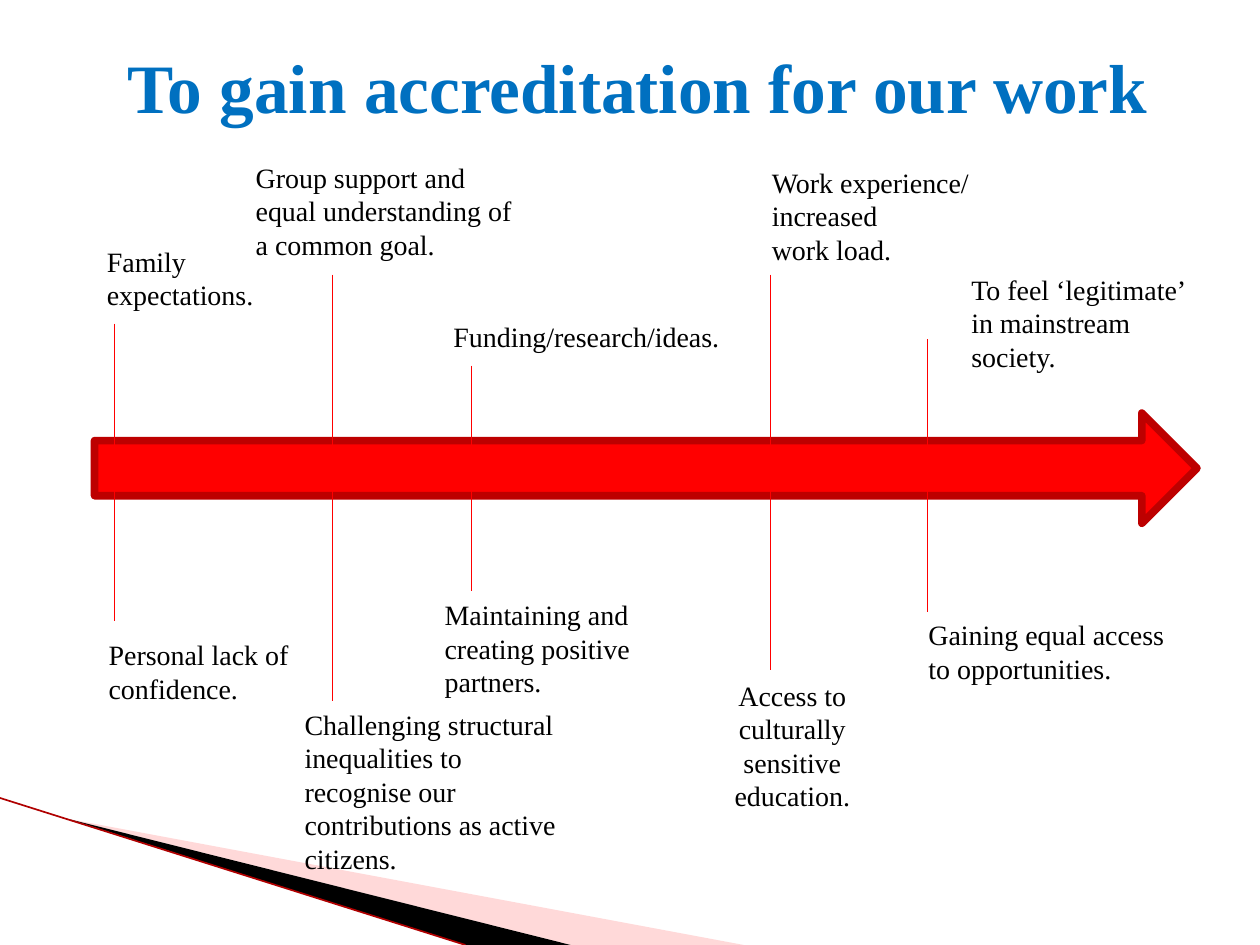
from lxml import etree
from pptx import Presentation
from pptx.dml.color import RGBColor
from pptx.enum.shapes import MSO_CONNECTOR as Connector, MSO_SHAPE as Shape
from pptx.enum.text import MSO_ANCHOR as Anchor, PP_ALIGN as Align
from pptx.oxml.ns import qn
from pptx.util import Pt

COLOURS = {
    "title": "0070C0", "text": "000000", "arrow": "FF0000", "arrow edge": "BD0000",
    "pink": "FFA2A2", "black": "000000", "edge": "B00000",
}
FONT = "Times New Roman"

# Marker lines: x, top, bottom, relative to the timeline box
MARKERS = [(11.5, 97, 267), (136, 69, 312.5), (215.5, 121, 250),
           (386.5, 69, 295), (476, 106, 261.5)]

# Labels: left, top, width, height, alignment, paragraphs, relative to the same box
LABELS = [
    (0, 48, 113, 46, Align.LEFT, ["Family expectations."]),
    (1, 273, 124.5, 46, Align.LEFT, ["Personal lack of confidence."]),
    (85, 0, 170, 65.5, Align.LEFT,
     ["Group support and equal understanding of a common goal."]),
    (113, 312.5, 164, 104.5, Align.LEFT,
     ["Challenging structural inequalities to recognise our contributions "
      "as active citizens."]),
    (193, 250, 164, 65.5, Align.LEFT, ["Maintaining and creating positive partners."]),
    (198, 91, 178, 26.5, Align.LEFT, ["Funding/research/ideas."]),
    (380, 3, 130, 65.5, Align.LEFT, ["Work experience/", "increased", "work load."]),
    (344, 296, 109.5, 85, Align.CENTER, ["Access to culturally sensitive education."]),
    (469.5, 261.5, 158.5, 46, Align.LEFT, ["Gaining equal access to opportunities."]),
    (494, 64, 136, 85, Align.LEFT, ["To feel ‘legitimate’ in mainstream society."]),
]


def colour(name):
    return RGBColor.from_string(COLOURS[name])


def add_span(para, text, size, name, bold=False):
    span = para.add_run()
    span.text = text
    font = span.font
    font.name, font.size, font.bold = FONT, Pt(size), bold
    font.color.rgb = colour(name)


def add_line(page, start, end, name, width):
    line = page.shapes.add_connector(
        Connector.STRAIGHT, *(Pt(value) for value in (*start, *end)))
    line.line.color.rgb = colour(name)
    line.line.width = Pt(width)
    etree.SubElement(line._element.spPr, qn("a:effectLst"))


def add_wedge(page, points, name, opacity=100):
    builder = page.shapes.build_freeform(
        *(Pt(value) for value in points[0]), scale=1.0)
    builder.add_line_segments([(Pt(x), Pt(y)) for x, y in points[1:]], close=True)
    wedge = builder.convert_to_shape()
    wedge.shadow.inherit = False
    wedge.fill.solid()
    wedge.fill.fore_color.rgb = colour(name)
    wedge.line.fill.background()
    if opacity < 100:
        tint = wedge._element.spPr.find(f"{qn('a:solidFill')}/{qn('a:srgbClr')}")
        etree.SubElement(tint, qn("a:alpha"), val=str(opacity * 1000))


def add_corner(page, left, top, width, height):
    """Draw the wedges that fan out along the bottom left corner."""
    bottom = top + height
    tip = (left + 39, top + 12)
    add_wedge(page, [tip, (left + width, bottom), (left + 326, bottom)], "pink", 40)
    add_wedge(page, [tip, (left + 326, bottom), (left + 266, bottom)], "black")
    add_line(page, (left, top), (left + 266, bottom), "edge", 0.95)


def add_title(page, left, top, width, height):
    title = page.shapes.title
    title.left, title.top, title.width, title.height = map(
        Pt, (left, top, width, height))
    frame = title.text_frame
    frame.word_wrap = True
    frame.vertical_anchor = Anchor.TOP
    frame.margin_left = Pt(16)
    para = frame.paragraphs[0]
    para.alignment = Align.CENTER
    add_span(para, "To gain accreditation for our work", 39.6, "title", bold=True)


def add_label(page, left, top, width, height, alignment, lines):
    box = page.shapes.add_textbox(*map(Pt, (left, top, width, height)))
    frame = box.text_frame
    frame.word_wrap = True
    for index, text in enumerate(lines):
        para = frame.add_paragraph() if index else frame.paragraphs[0]
        para.alignment = alignment
        add_span(para, text, 16, "text")


def add_timeline(page, left, top, width):
    """Draw the arrow with its marker lines and the labels around it."""
    arrow = page.shapes.add_shape(
        Shape.RIGHT_ARROW, Pt(left), Pt(top + 148), Pt(width), Pt(63))
    arrow.shadow.inherit = False
    arrow.fill.solid()
    arrow.fill.fore_color.rgb = colour("arrow")
    arrow.line.color.rgb = colour("arrow edge")
    arrow.line.width = Pt(4.33)
    for x, start, end in MARKERS:
        add_line(page, (left + x, top + start), (left + x, top + end), "arrow", 0.75)
    for x, y, *rest in LABELS:
        add_label(page, left + x, top + y, *rest)


def main():
    deck = Presentation()
    deck.slide_width, deck.slide_height = Pt(720), Pt(540)
    page = deck.slides.add_slide(deck.slide_layouts[5])
    add_corner(page, 0, 456, 425, 84)
    add_title(page, 36, 21.6, 648, 90)
    add_timeline(page, 54, 88, 630)
    deck.save("out.pptx")


if __name__ == "__main__":
    main()
